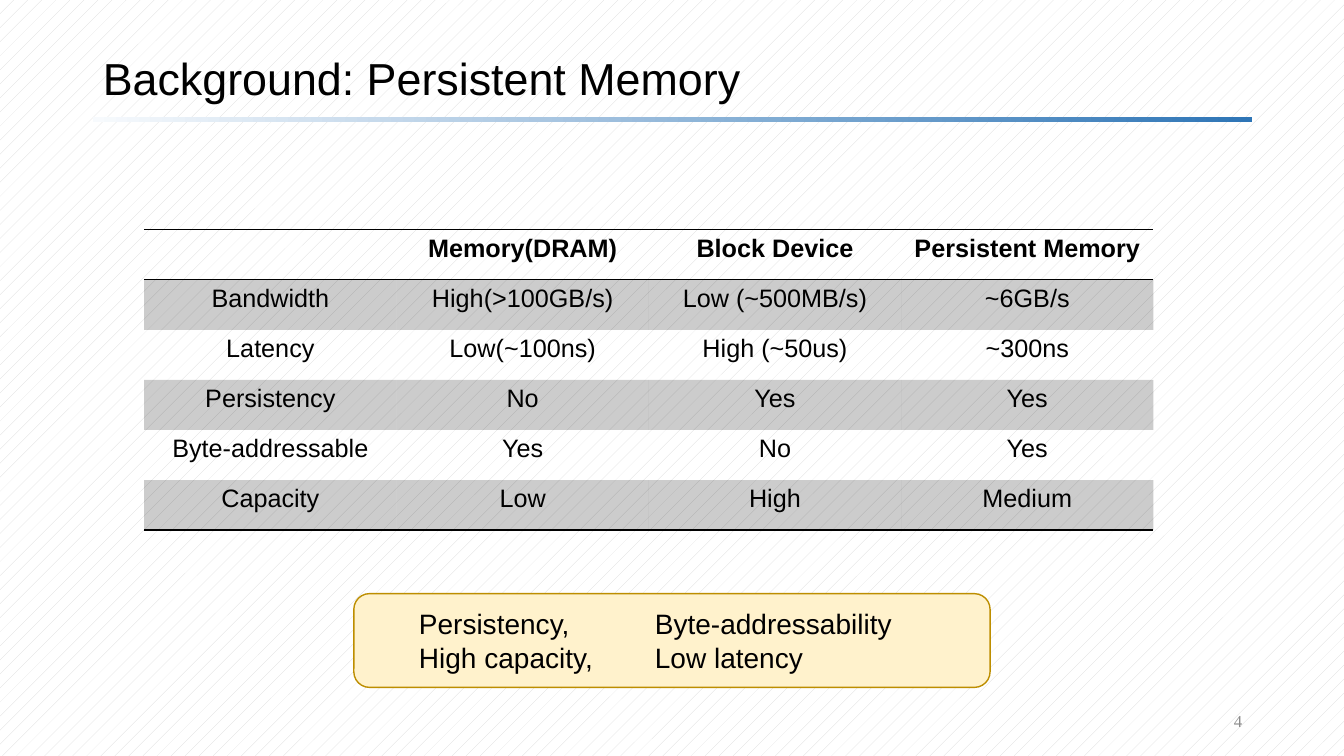
import pptx
import pptx.util
import pptx.dml.color
import pptx.enum.dml
import pptx.enum.shapes
import pptx.enum.text
import pptx.oxml
import pptx.oxml.ns

WIDE, HIGH = 13.33, 7.5
HUES = {
    "ink": "000000", "pale": "F7FAFD", "blue": "2E75B6", "cream": "FFF2CC",
    "gold": "BD8E00", "gray": "8C8C8C", "mist": "D9D9D9", "white": "FFFFFF",
}
PLAIN = "{2D5ABB26-0587-4C30-8999-92F81FD0307C}"
SPACE = pptx.oxml.ns.nsdecls("a")
ALIGN = pptx.enum.text.PP_ALIGN
ANCHOR = pptx.enum.text.MSO_ANCHOR
SHAPE = pptx.enum.shapes.MSO_SHAPE
ROWS = [
    ["", "Memory(DRAM)", "Block Device", "Persistent Memory"],
    ["Bandwidth", "High(>100GB/s)", "Low (~500MB/s)", "~6GB/s"],
    ["Latency", "Low(~100ns)", "High (~50us)", "~300ns"],
    ["Persistency", "No", "Yes", "Yes"],
    ["Byte-addressable", "Yes", "No", "Yes"],
    ["Capacity", "Low", "High", "Medium"],
]
GAINS = [("Persistency,", "Byte-addressability"), ("High capacity,", "Low latency")]


def hue(name):
    """Return a named colour."""
    return pptx.dml.color.RGBColor.from_string(HUES[name])


def place(left, top, wide, high):
    """Turn percentages of the slide into lengths."""
    return [pptx.util.Inches(part * size / 100)
            for part, size in zip((left, top, wide, high), (WIDE, HIGH) * 2)]


def style(para, size, align, name="ink", font="Arial", bold=False):
    """Format one paragraph."""
    para.alignment = align
    para.font.size = pptx.util.Pt(size)
    para.font.name = font
    para.font.bold = bold
    para.font.color.rgb = hue(name)


def add_back(slide):
    """Lay the faint pattern behind the slide."""
    fill = slide.background.fill
    fill.patterned()
    fill.pattern = pptx.enum.dml.MSO_PATTERN.PERCENT_5
    fill.fore_color.rgb = hue("mist")
    fill.back_color.rgb = hue("white")


def add_title(slide, text):
    """Fill and move the title placeholder."""
    title = slide.shapes.title
    title.left, title.top, title.width, title.height = place(6.9, 5.73, 86.27, 10)
    frame = title.text_frame
    frame.text = text
    frame.auto_size = pptx.enum.text.MSO_AUTO_SIZE.NONE
    frame.vertical_anchor = ANCHOR.MIDDLE
    frame.paragraphs[0].line_spacing = 0.9
    style(frame.paragraphs[0], 32, ALIGN.LEFT)


def add_rule(slide):
    """Draw the fading rule under the title."""
    rule = slide.shapes.add_shape(SHAPE.RECTANGLE, *place(6.9, 15.47, 86.27, 0.7))
    rule.shadow.inherit = False
    rule.line.fill.background()
    rule.fill.gradient()
    rule.fill.gradient_angle = 0
    for stop, name in zip(rule.fill.gradient_stops, ("pale", "blue")):
        stop.color.rgb = hue(name)


def add_edge(cell, side):
    """Draw a thin border on one side of a cell."""
    cell._tc.get_or_add_tcPr().append(pptx.oxml.parse_xml(
        f'<a:{side} {SPACE} w="12700"><a:solidFill>'
        f'<a:srgbClr val="{HUES["ink"]}"/></a:solidFill></a:{side}>'))


def shade(cell):
    """Fill a cell with a see-through band."""
    cell.fill.solid()
    cell.fill.fore_color.rgb = hue("ink")
    color = cell._tc.tcPr.find("{*}solidFill/{*}srgbClr")
    color.append(pptx.oxml.parse_xml(f'<a:alpha {SPACE} val="20000"/>'))


def add_grid(slide, rows):
    """Build the table that compares the devices."""
    box = place(10.73, 30.4, 75.09, 39.73)
    table = slide.shapes.add_table(len(rows), len(rows[0]), *box).table
    table._tbl.tblPr.find("{*}tableStyleId").text = PLAIN
    for i, row in enumerate(rows):
        for j, text in enumerate(row):
            cell = table.cell(i, j)
            cell.text = text
            style(cell.text_frame.paragraphs[0], 18, ALIGN.CENTER, bold=i == 0)
            if i == 0:
                add_edge(cell, "lnT")
            if i in (0, len(rows) - 1):
                add_edge(cell, "lnB")
            if i % 2:
                shade(cell)
            else:
                cell.fill.background()


def add_gains(slide, gains):
    """Draw the rounded box with two tabbed columns."""
    box = slide.shapes.add_shape(SHAPE.ROUNDED_RECTANGLE,
                                 *place(26.33, 78.53, 47.34, 12.4))
    box.shadow.inherit = False
    box.fill.solid()
    box.fill.fore_color.rgb = hue("cream")
    box.line.color.rgb = hue("gold")
    box.line.width = pptx.util.Pt(1)
    frame = box.text_frame
    frame.margin_left = pptx.util.Inches(0.6)
    frame.vertical_anchor = ANCHOR.MIDDLE
    frame.text = "\n".join("\t".join(pair) for pair in gains)
    stop = pptx.util.Inches(2.34)
    for para in frame.paragraphs:
        style(para, 20, ALIGN.LEFT)
        para._p.pPr.find("{*}defRPr").addprevious(pptx.oxml.parse_xml(
            f'<a:tabLst {SPACE}><a:tab pos="{stop}" algn="l"/></a:tabLst>'))


def add_page(slide, text):
    """Write the page number."""
    frame = slide.shapes.add_textbox(*place(70.67, 92.67, 22.5, 5.33)).text_frame
    frame.word_wrap = True
    frame.vertical_anchor = ANCHOR.MIDDLE
    frame.text = text
    style(frame.paragraphs[0], 12, ALIGN.RIGHT, "gray", "Times New Roman")


def main():
    """Build and save the slide."""
    deck = pptx.Presentation()
    deck.slide_width = pptx.util.Inches(WIDE)
    deck.slide_height = pptx.util.Inches(HIGH)
    slide = deck.slides.add_slide(deck.slide_layouts[5])
    add_back(slide)
    add_rule(slide)
    add_page(slide, "4")
    add_title(slide, "Background: Persistent Memory")
    add_grid(slide, ROWS)
    add_gains(slide, GAINS)
    deck.save("out.pptx")


if __name__ == "__main__":
    main()
